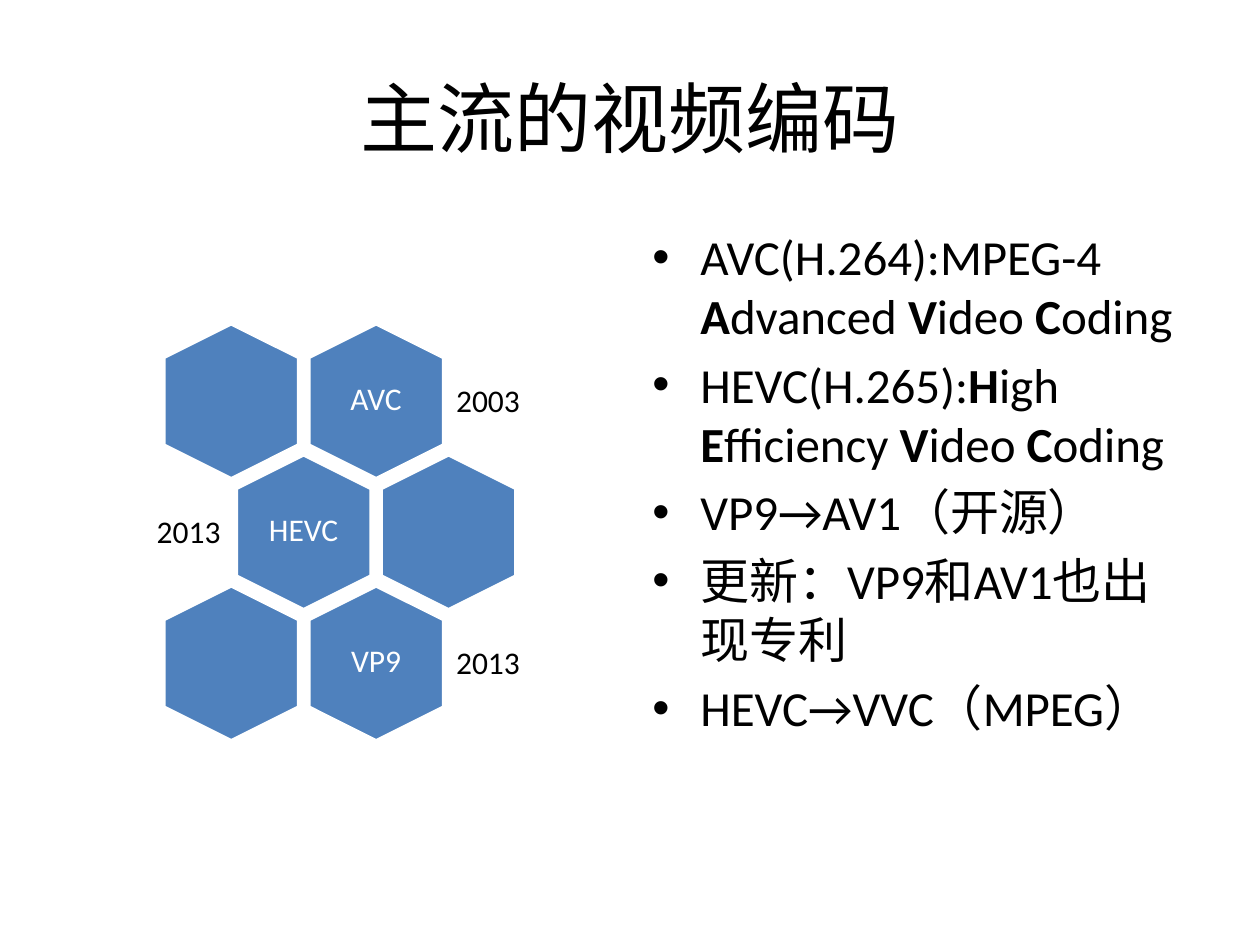
"""Build a slide on mainstream video codecs with a hexagon timeline and bullets."""
from lxml import etree
from pptx import Presentation
from pptx.dml.color import RGBColor
from pptx.enum.shapes import MSO_SHAPE
from pptx.enum.text import MSO_ANCHOR, PP_ALIGN
from pptx.oxml.ns import qn
from pptx.util import Inches, Pt

HEXAGON = MSO_SHAPE.HEXAGON
TOP, MIDDLE = MSO_ANCHOR.TOP, MSO_ANCHOR.MIDDLE
LEFT, CENTER, RIGHT = PP_ALIGN.LEFT, PP_ALIGN.CENTER, PP_ALIGN.RIGHT
BLACK = RGBColor(0x00, 0x00, 0x00)
WHITE = RGBColor(0xFF, 0xFF, 0xFF)
BLUE = RGBColor(0x4F, 0x81, 0xBD)


def add_text_frame(shapes, left, top, width, height, anchor, inset=None):
    box = shapes.add_textbox(Inches(left), Inches(top), Inches(width), Inches(height))
    frame = box.text_frame
    frame.word_wrap = True
    frame.vertical_anchor = anchor
    if inset is not None:
        frame.margin_left = frame.margin_right = Inches(inset)
        frame.margin_top = frame.margin_bottom = Inches(inset)
    return frame


def add_run(paragraph, text, size, color, bold=False):
    run = paragraph.add_run()
    run.text = text
    run.font.name = "Calibri"
    run.font.size = Pt(size)
    run.font.color.rgb = color
    run.font.bold = bold


presentation = Presentation()
presentation.slide_width = Inches(10)
presentation.slide_height = Inches(7.5)
slide = presentation.slides.add_slide(presentation.slide_layouts[6])

title = add_text_frame(slide.shapes, 0.5, 0.3, 9, 1.25, MIDDLE).paragraphs[0]
title.alignment = CENTER
add_run(title, "主流的视频编码", 44, BLACK)

HEXAGON_WIDTH, HEXAGON_HEIGHT = 1.23, 1.07
COLUMN_PITCH, ROW_PITCH = 1.15, 1.04
codecs = [("AVC", "2003", 1), ("HEVC", "2013", 0), ("VP9", "2013", 1)]
timeline = slide.shapes.add_group_shape().shapes

for row, (codec, year, codec_column) in enumerate(codecs):
    row_left = 1.22 + row % 2 * COLUMN_PITCH / 2
    row_top = 2.65 + row * ROW_PITCH
    for column in range(2):
        hexagon = timeline.add_shape(
            HEXAGON, Inches(row_left + column * COLUMN_PITCH), Inches(row_top),
            Inches(HEXAGON_WIDTH), Inches(HEXAGON_HEIGHT))
        hexagon.rotation = 90
        hexagon.adjustments[0] = 0.25
        hexagon.shadow.inherit = False
        hexagon.fill.solid()
        hexagon.fill.fore_color.rgb = BLUE
        hexagon.line.color.rgb = WHITE
        hexagon.line.width = Pt(2)

    codec_left = row_left + codec_column * COLUMN_PITCH + 0.25
    year_left, year_width, year_side = (3.55, 1.37, LEFT) if codec_column else (0.5, 1.32, RIGHT)
    labels = [
        (codec, codec_left, 0.11, 0.73, 0.84, CENTER, WHITE),
        (year, year_left, 0.17, year_width, 0.74, year_side, BLACK),
    ]
    for text, left, offset, width, height, alignment, color in labels:
        frame = add_text_frame(timeline, left, row_top + offset, width, height, MIDDLE, 0.07)
        paragraph = frame.paragraphs[0]
        paragraph.alignment = alignment
        paragraph.line_spacing = 0.9
        paragraph.space_after = Pt(6.3)
        add_run(paragraph, text, 18, color)

bullets = [
    "AVC(H.264):MPEG-4 *A*dvanced *V*ideo *C*oding",
    "HEVC(H.265):*H*igh *E*fficiency *V*ideo *C*oding",
    "VP9→AV1（开源）",
    "更新：VP9和AV1也出现专利",
    "HEVC→VVC（MPEG）",
]
body = add_text_frame(slide.shapes, 5.08, 1.75, 4.42, 4.95, TOP)
for index, bullet in enumerate(bullets):
    paragraph = body.add_paragraph() if index else body.paragraphs[0]
    paragraph.space_before = Pt(5.6)
    properties = paragraph._p.get_or_add_pPr()
    properties.set("marL", str(Inches(0.38)))
    properties.set("indent", str(Inches(-0.38)))
    etree.SubElement(properties, qn("a:buFont")).set("typeface", "Arial")
    etree.SubElement(properties, qn("a:buChar")).set("char", "•")
    for part, text in enumerate(bullet.split("*")):
        add_run(paragraph, text, 28, BLACK, bold=part % 2 == 1)

presentation.save("out.pptx")
